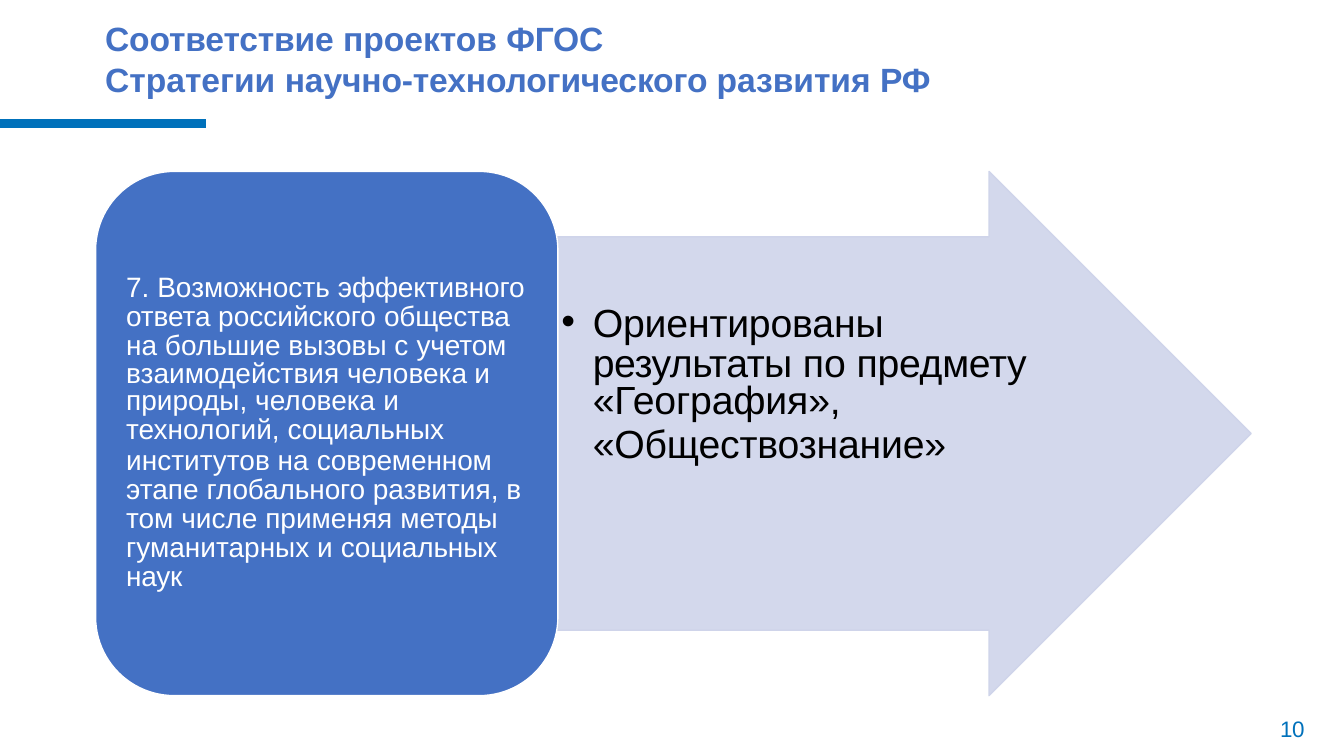
from dataclasses import dataclass

from lxml import etree
from pptx import Presentation, util as u
from pptx.dml.color import RGBColor
from pptx.enum import shapes, text
from pptx.oxml.ns import qn


@dataclass(frozen=True)
class Theme:
    """Colours, type sizes and font of the slide."""
    font: str = "Arial"
    blue: str = "4471C4"
    accent: str = "0071BB"
    pale: str = "CFD4EA"
    white: str = "FFFFFF"
    black: str = "000000"
    title: int = 24
    body: int = 20
    result: int = 28
    number: int = 16


class SlideBuilder:
    """Draws styled elements on the current slide."""

    def __init__(self, slide, theme):
        self.slide = slide
        self.theme = theme

    def shape(self, kind, box, fill, line, adjustments, opacity=None):
        """Add a filled preset shape with a thin outline."""
        shape = self.slide.shapes.add_shape(kind, *map(u.Cm, box))
        shape.shadow.inherit = False
        for index, value in enumerate(adjustments):
            shape.adjustments[index] = value
        shape.fill.solid()
        shape.fill.fore_color.rgb = RGBColor.from_string(fill)
        shape.line.color.rgb = RGBColor.from_string(line)
        shape.line.width = u.Pt(1)
        if opacity is not None:
            colour = shape.fill._xPr.find(qn("a:solidFill"))[0]
            etree.SubElement(colour, qn("a:alpha")).set("val", str(opacity * 1000))

    def rule(self, left, right, top, colour, width):
        """Add a horizontal line."""
        ends = map(u.Cm, (left, top, right, top))
        line = self.slide.shapes.add_connector(shapes.MSO_CONNECTOR.STRAIGHT, *ends)
        line.line.color.rgb = RGBColor.from_string(colour)
        line.line.width = u.Pt(width)
        etree.SubElement(line._element.spPr, qn("a:effectLst"))

    def text(self, box, paragraphs, size, colour, inset=0, indent=0.03, bold=False):
        """Add a text box from (options, runs) paragraphs."""
        frame = self.slide.shapes.add_textbox(*map(u.Cm, box)).text_frame
        frame.word_wrap = True
        frame.auto_size = text.MSO_AUTO_SIZE.SHAPE_TO_FIT_TEXT
        frame.margin_left = frame.margin_right = frame.margin_bottom = 0
        frame.margin_top = u.Cm(inset)
        for index, (options, runs) in enumerate(paragraphs):
            paragraph = frame.add_paragraph() if index else frame.paragraphs[0]
            self.format_paragraph(paragraph, indent, **options)
            for words, tracking in runs:
                run = paragraph.add_run()
                run.text = words
                run.font.name = self.theme.font
                run.font.size = u.Pt(size)
                run.font.bold = bold
                run.font.color.rgb = RGBColor.from_string(colour)
                run._r.get_or_add_rPr().set("spc", str(round(tracking * 100)))

    def format_paragraph(self, paragraph, indent, spacing=None, before=0, hanging=0):
        """Set the indent, bullet and spacing of a paragraph."""
        properties = paragraph._p.get_or_add_pPr()
        properties.set("marL", str(u.Cm(indent)))
        properties.set("indent", str(-u.Cm(hanging)))
        if hanging:
            etree.SubElement(properties, qn("a:buFont")).set("typeface", self.theme.font)
            etree.SubElement(properties, qn("a:buChar")).set("char", "•")
        if spacing:
            paragraph.line_spacing = spacing
        if before:
            paragraph.space_before = u.Pt(before)


TITLE = [
    ({}, [("Соответствие ", -0.1), ("проектов ", 0), ("ФГОС", -0.2)]),
    ({}, [("Стратегии ", 0), ("научно-технологического ", -0.1),
          ("развития ", 0), ("РФ", -0.2)]),
]
COMPETENCE = [
    ({"spacing": 0.86}, [
        ("7. Возможность ", 0), ("эффективного ответа ", -0.1), ("российского ", 0),
        ("общества ", -0.1), ("на большие вызовы с ", 0), ("учетом ", -0.1),
        ("взаимодействия человека", 0), (" и", -0.6)]),
    ({"spacing": u.Pt(19)}, [("природы, человека ", 0), ("и", -0.5)]),
    ({"spacing": u.Pt(20.7)}, [("технологий, ", 0), ("социальных", -0.1)]),
    ({"spacing": 0.86, "before": 1.6}, [
        ("институтов на ", 0), ("современном ", -0.1), ("этапе ", 0),
        ("глобального ", -0.1), ("развития, ", 0), ("в ", -0.5),
        ("том числе применяя ", 0), ("методы ", -0.1), ("гуманитарных и ", 0),
        ("социальных ", -0.1), ("наук", -0.2)]),
]
RESULTS = [
    ({"spacing": u.Pt(29), "hanging": 0.79}, [
        ("Ориентированы ", -0.1), ("результаты ", -0.3), ("по ", 0), ("предмету", -0.2)]),
    ({"spacing": u.Pt(26.4)}, [("«География»,", -0.1)]),
    ({"spacing": u.Pt(31.3)}, [("«Обществознание»", -0.1)]),
]
PAGE_NUMBER = [({"spacing": u.Pt(18.7)}, [("10", -0.2)])]


def main():
    """Build and save the slide."""
    presentation = Presentation()
    presentation.slide_width, presentation.slide_height = u.Cm(33.87), u.Cm(19.05)
    theme = Theme()
    builder = SlideBuilder(presentation.slides.add_slide(presentation.slide_layouts[6]), theme)
    preset = shapes.MSO_SHAPE

    builder.rule(0, 5.2, 3.11, theme.accent, 6)
    builder.shape(preset.RIGHT_ARROW, (14.05, 4.32, 17.48, 13.21),
                  theme.pale, theme.pale, (0.75, 0.5), opacity=90)
    builder.text((14.1, 7.47, 11.99, 4.32), RESULTS, theme.result, theme.black,
                 inset=0.2, indent=0.84)
    builder.shape(preset.ROUNDED_RECTANGLE, (2.41, 4.32, 11.65, 13.21),
                  theme.blue, theme.white, (0.17,))
    builder.text((3.15, 6.76, 10.13, 8.23), COMPETENCE, theme.body, theme.white, inset=0.15)
    builder.text((2.62, 0.43, 20.96, 2.11), TITLE, theme.title, theme.blue,
                 inset=0.03, bold=True)
    builder.text((32.16, 18.03, 0.86, 0.71), PAGE_NUMBER, theme.number, theme.accent, indent=0.1)

    presentation.save("out.pptx")


if __name__ == "__main__":
    main()
